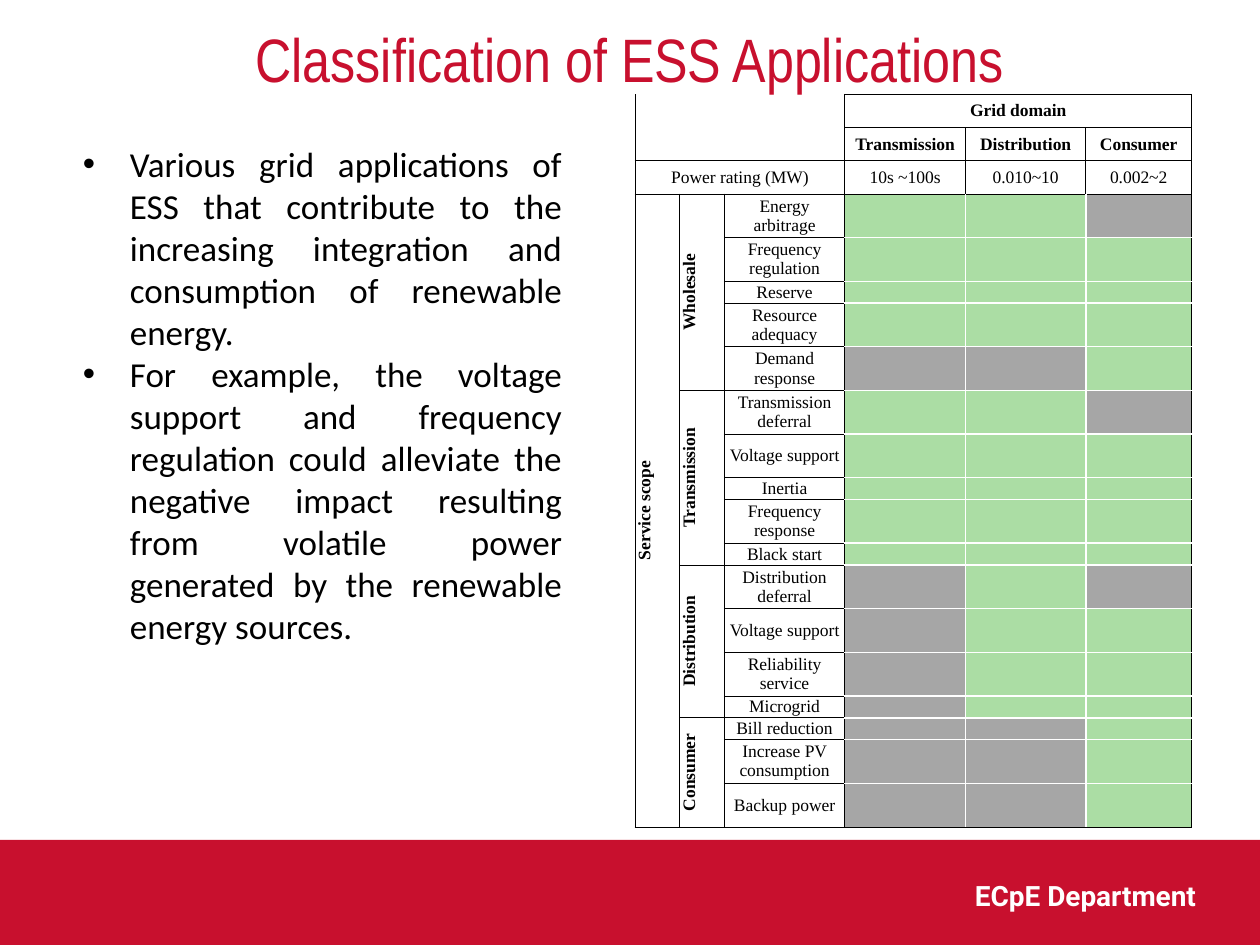
from dataclasses import dataclass

from lxml import etree
from pptx import Presentation
from pptx import util as u
from pptx.dml.color import RGBColor
from pptx.enum import shapes, text
from pptx.oxml import ns


@dataclass
class Theme:
    red: str = "C8102E"
    white: str = "FFFFFF"
    black: str = "000000"
    served: str = "ABDDA4"
    unserved: str = "A6A6A6"
    title_size: float = 35
    body_size: float = 20
    footer_size: float = 16
    table_size: float = 10


theme = Theme()


def write(frame, content, font, size, color=theme.black, bold=False,
          align=text.PP_ALIGN.CENTER, anchor=text.MSO_ANCHOR.MIDDLE, bullet=None):
    frame.word_wrap = True
    frame.vertical_anchor = anchor
    for index, line in enumerate(content.split("\n")):
        paragraph = frame.paragraphs[0] if index == 0 else frame.add_paragraph()
        paragraph.alignment = align
        if bullet:
            props = paragraph._p.get_or_add_pPr()
            props.set("marL", str(u.Cm(0.95)))
            props.set("indent", str(-u.Cm(0.95)))
            etree.SubElement(props, ns.qn("a:buFont"), typeface="Arial")
            etree.SubElement(props, ns.qn("a:buChar"), char=bullet)
        if not line:
            etree.SubElement(paragraph._p, ns.qn("a:endParaRPr"), sz=str(size * 100))
            continue
        run = paragraph.add_run()
        run.text = line
        run.font.name = font
        run.font.size = u.Pt(size)
        run.font.bold = bold
        run.font.color.rgb = RGBColor.from_string(color)


def block_of(row, col):
    if row < 2 and 0 <= col < 3:
        return "corner"
    if 3 <= row < 20 and 3 <= col < 6:
        return "matrix"
    return row, col


deck = Presentation()
deck.slide_width, deck.slide_height = u.Cm(25.4), u.Cm(19.05)
slide = deck.slides.add_slide(deck.slide_layouts[6])

band = slide.shapes.add_shape(shapes.MSO_SHAPE.RECTANGLE, 0, u.Cm(16.93), u.Cm(25.4), u.Cm(2.12))
band.shadow.inherit = False
band.fill.solid()
band.fill.fore_color.rgb = RGBColor.from_string(theme.red)
band.line.fill.background()

department = slide.shapes.add_textbox(u.Cm(17.58), u.Cm(17.58), u.Cm(6.78), u.Cm(1.07))
write(department.text_frame, "ECpE Department", "Roboto", theme.footer_size, color=theme.white,
      bold=True, align=text.PP_ALIGN.RIGHT, anchor=text.MSO_ANCHOR.TOP)

services = [
    ("Wholesale", [("Energy arbitrage", "110"), ("Frequency regulation", "111"),
                   ("Reserve", "111"), ("Resource adequacy", "111"),
                   ("Demand response", "001")]),
    ("Transmission", [("Transmission deferral", "110"), ("Voltage support", "111"),
                      ("Inertia", "111"), ("Frequency response", "111"),
                      ("Black start", "111")]),
    ("Distribution", [("Distribution deferral", "010"), ("Voltage support", "011"),
                      ("Reliability service", "011"), ("Microgrid", "011")]),
    ("Consumer", [("Bill reduction", "001"), ("Increase PV consumption", "001"),
                  ("Backup power", "001")]),
]
low_rows = {"Reserve", "Inertia", "Black start", "Microgrid", "Bill reduction"}

labels = {(0, 3): "Grid domain", (1, 3): "Transmission", (1, 4): "Distribution",
          (1, 5): "Consumer", (2, 0): "Power rating (MW)", (2, 3): "10s ~100s",
          (2, 4): "0.010~10", (2, 5): "0.002~2", (3, 0): "Service scope"}
fills = {}
heights = [0.67] * 3
merges = [(0, 3, 0, 5), (2, 0, 2, 2), (3, 0, 19, 0)]
for scope, entries in services:
    first = len(heights)
    labels[first, 1] = scope
    for service, coverage in entries:
        row = len(heights)
        labels[row, 2] = service
        for col, flag in enumerate(coverage, 3):
            fills[row, col] = theme.served if flag == "1" else theme.unserved
        heights.append(0.44 if service in low_rows else 0.88)
    merges.append((first, 1, len(heights) - 1, 1))

widths = [0.9, 0.9, 2.43, 2.43, 2.43, 2.13]
applications = slide.shapes.add_table(len(heights), len(widths), u.Cm(12.8), u.Cm(1.9),
                                      u.Cm(sum(widths)), u.Cm(sum(heights))).table
applications.first_row = applications.horz_banding = False
for column, width in zip(applications.columns, widths):
    column.width = u.Cm(width)
for table_row, height in zip(applications.rows, heights):
    table_row.height = u.Cm(height)

sides = {"a:lnL": (0, -1), "a:lnR": (0, 1), "a:lnT": (-1, 0), "a:lnB": (1, 0)}
for row in range(len(heights)):
    for col in range(len(widths)):
        cell = applications.cell(row, col)
        upright = row >= 3 and col < 2
        cell.margin_left = cell.margin_right = u.Cm(0.08)
        cell.margin_top = cell.margin_bottom = 0
        write(cell.text_frame, labels.get((row, col), ""), "Times New Roman", theme.table_size,
              bold=row < 2 or upright)
        cell.vertical_anchor = text.MSO_ANCHOR.MIDDLE
        props = cell._tc.get_or_add_tcPr()
        if upright:
            props.set("vert", "vert270")
        block = block_of(row, col)
        for side, (down, across) in sides.items():
            inside = block == block_of(row + down, col + across)
            width = 1 if inside else 0.5
            border = etree.SubElement(props, ns.qn(side), w=str(u.Pt(width)))
            if inside and block == "corner":
                etree.SubElement(border, ns.qn("a:noFill"))
                continue
            paint = etree.SubElement(border, ns.qn("a:solidFill"))
            etree.SubElement(paint, ns.qn("a:srgbClr"), val=theme.white if inside else theme.black)
        cell.fill.solid()
        cell.fill.fore_color.rgb = RGBColor.from_string(fills.get((row, col), theme.white))

for top, left, bottom, right in merges:
    applications.cell(top, left).merge(applications.cell(bottom, right))

summary = slide.shapes.add_textbox(u.Cm(1.42), u.Cm(2.74), u.Cm(10.16), u.Cm(10.52))
write(summary.text_frame,
      "Various grid applications of ESS that contribute to the increasing integration and "
      "consumption of renewable energy.\n"
      "For example, the voltage support and frequency regulation could alleviate the negative "
      "impact resulting from volatile power generated by the renewable energy sources.",
      "Calibri", theme.body_size, align=text.PP_ALIGN.JUSTIFY, anchor=text.MSO_ANCHOR.TOP,
      bullet="•")

heading = slide.shapes.add_textbox(0, u.Cm(0.2), u.Cm(25.4), u.Cm(1.96))
write(heading.text_frame, "Classification of ESS Applications", "Arial Narrow",
      theme.title_size, color=theme.red)

deck.save("out.pptx")
